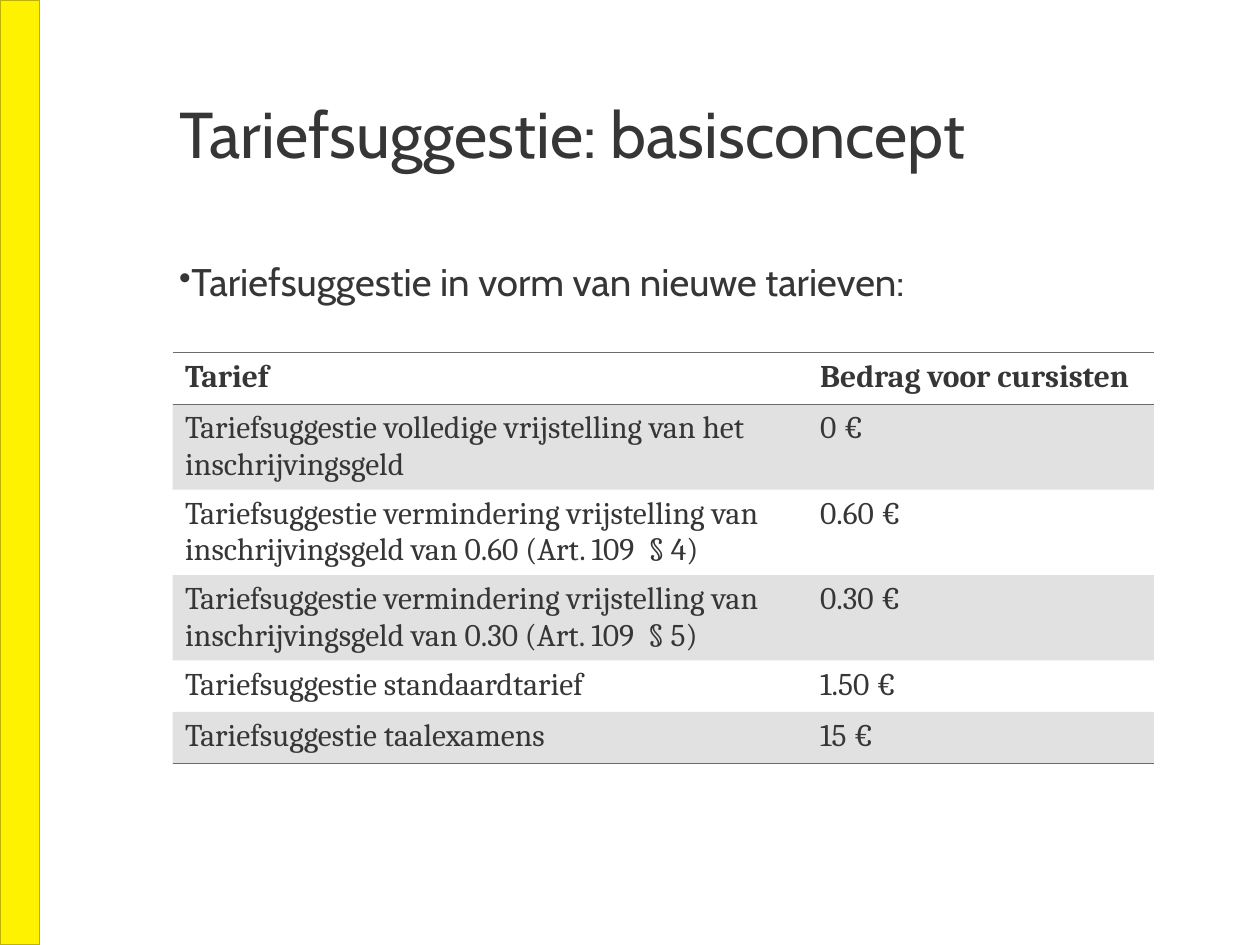
from lxml.etree import SubElement
from pptx import Presentation
from pptx.dml.color import RGBColor
from pptx.enum.shapes import MSO_SHAPE
from pptx.enum.text import MSO_ANCHOR, MSO_AUTO_SIZE, PP_ALIGN
from pptx.oxml import parse_xml
from pptx.oxml.ns import nsdecls, qn
from pptx.util import Cm, Pt

YELLOW = RGBColor(0xFF, 0xF2, 0x00)
OLIVE = RGBColor(0xBD, 0xB3, 0x00)
DARK = RGBColor(0x37, 0x36, 0x36)
GREY = RGBColor(0x6B, 0x6B, 0x6B)

TITLE_FONT = "Cabin"
TABLE_FONT = "Cambria"
NO_GRID_STYLE = "{2D5ABB26-0587-4C30-8999-92F81FD0307C}"

TEXT_LEFT = Cm(3.61)
TEXT_WIDTH = Cm(20.6)
COLUMN_WIDTHS = [Cm(12.8), Cm(6.98)]
SINGLE_ROW, DOUBLE_ROW = Cm(1.04), Cm(1.72)

# Each row: height, tariff, amount
TARIFFS = [
    (SINGLE_ROW, "Tarief", "Bedrag voor cursisten"),
    (DOUBLE_ROW, "Tariefsuggestie volledige vrijstelling van het inschrijvingsgeld", "0 €"),
    (DOUBLE_ROW, "Tariefsuggestie vermindering vrijstelling van inschrijvingsgeld "
                 "van 0.60 (Art. 109  § 4)", "0.60 €"),
    (DOUBLE_ROW, "Tariefsuggestie vermindering vrijstelling van inschrijvingsgeld "
                 "van 0.30 (Art. 109  § 5)", "0.30 €"),
    (SINGLE_ROW, "Tariefsuggestie standaardtarief", "1.50 €"),
    (SINGLE_ROW, "Tariefsuggestie taalexamens", "15 €"),
]


def write_text(text_frame, text, font, size, bold=False, line_spacing=None, bullet=None):
    paragraph = text_frame.paragraphs[0]
    paragraph.text = text
    paragraph.alignment = PP_ALIGN.LEFT
    if line_spacing:
        paragraph.line_spacing = line_spacing
    if bullet:
        properties = paragraph._p.get_or_add_pPr()
        SubElement(properties, qn("a:buSzPct"), val="90000")
        SubElement(properties, qn("a:buChar"), char=bullet)
    run_font = paragraph.runs[0].font
    run_font.name = font
    run_font.size = Pt(size)
    run_font.bold = bold
    run_font.color.rgb = DARK


def format_box(shape, top, height):
    shape.left, shape.top, shape.width, shape.height = TEXT_LEFT, top, TEXT_WIDTH, height
    frame = shape.text_frame
    frame.margin_left = frame.margin_right = frame.margin_top = frame.margin_bottom = 0
    frame.word_wrap = True
    frame.auto_size = MSO_AUTO_SIZE.NONE
    frame.vertical_anchor = MSO_ANCHOR.TOP
    return frame


def add_side_bar(slide, height):
    bar = slide.shapes.add_shape(MSO_SHAPE.RECTANGLE, 0, 0, Cm(0.8), height)
    bar.shadow.inherit = False
    bar.fill.solid()
    bar.fill.fore_color.rgb = YELLOW
    bar.line.color.rgb = OLIVE
    bar.line.width = Pt(1)


def add_border(cell, side):
    """Draw a rule on one side of a cell: "T" for top, "B" for bottom."""
    cell._tc.get_or_add_tcPr().append(parse_xml(
        f'<a:ln{side} {nsdecls("a")} w="{Pt(1)}"><a:solidFill>'
        f'<a:srgbClr val="{GREY}"/></a:solidFill></a:ln{side}>'))


def fill_band(cell):
    cell.fill.solid()
    cell.fill.fore_color.rgb = GREY
    color = cell._tc.tcPr.find(qn("a:solidFill")).find(qn("a:srgbClr"))
    SubElement(color, qn("a:alpha"), val="20000")


def add_tariff_table(slide):
    frame = slide.shapes.add_table(len(TARIFFS), len(COLUMN_WIDTHS), Cm(3.48), Cm(7.11),
                                   sum(COLUMN_WIDTHS), sum(row[0] for row in TARIFFS))
    table = frame.table
    table._tbl.tblPr.find(qn("a:tableStyleId")).text = NO_GRID_STYLE
    for column, width in zip(table.columns, COLUMN_WIDTHS):
        column.width = width
    last = len(TARIFFS) - 1
    for row_index, (height, *texts) in enumerate(TARIFFS):
        table.rows[row_index].height = height
        for column_index, text in enumerate(texts):
            cell = table.cell(row_index, column_index)
            write_text(cell.text_frame, text, TABLE_FONT, 18, bold=row_index == 0)
            # Rules around the header and below the last row
            if row_index == 0:
                add_border(cell, "T")
            if row_index in (0, last):
                add_border(cell, "B")
            if row_index % 2:
                fill_band(cell)
            else:
                cell.fill.background()


def main():
    presentation = Presentation()
    presentation.slide_width, presentation.slide_height = Cm(25.4), Cm(19.05)
    slide = presentation.slides.add_slide(presentation.slide_layouts[5])

    add_side_bar(slide, presentation.slide_height)

    # Title and introduction
    title = format_box(slide.shapes.title, Cm(2.11), Cm(3.1))
    write_text(title, "Tariefsuggestie: basisconcept", TITLE_FONT, 37, line_spacing=Pt(38))
    introduction = format_box(slide.shapes.add_textbox(0, 0, 0, 0), Cm(5.31), Cm(1.5))
    write_text(introduction, "Tariefsuggestie in vorm van nieuwe tarieven:", TITLE_FONT, 22,
               line_spacing=0.9, bullet="•")

    add_tariff_table(slide)
    presentation.save("out.pptx")


if __name__ == "__main__":
    main()
